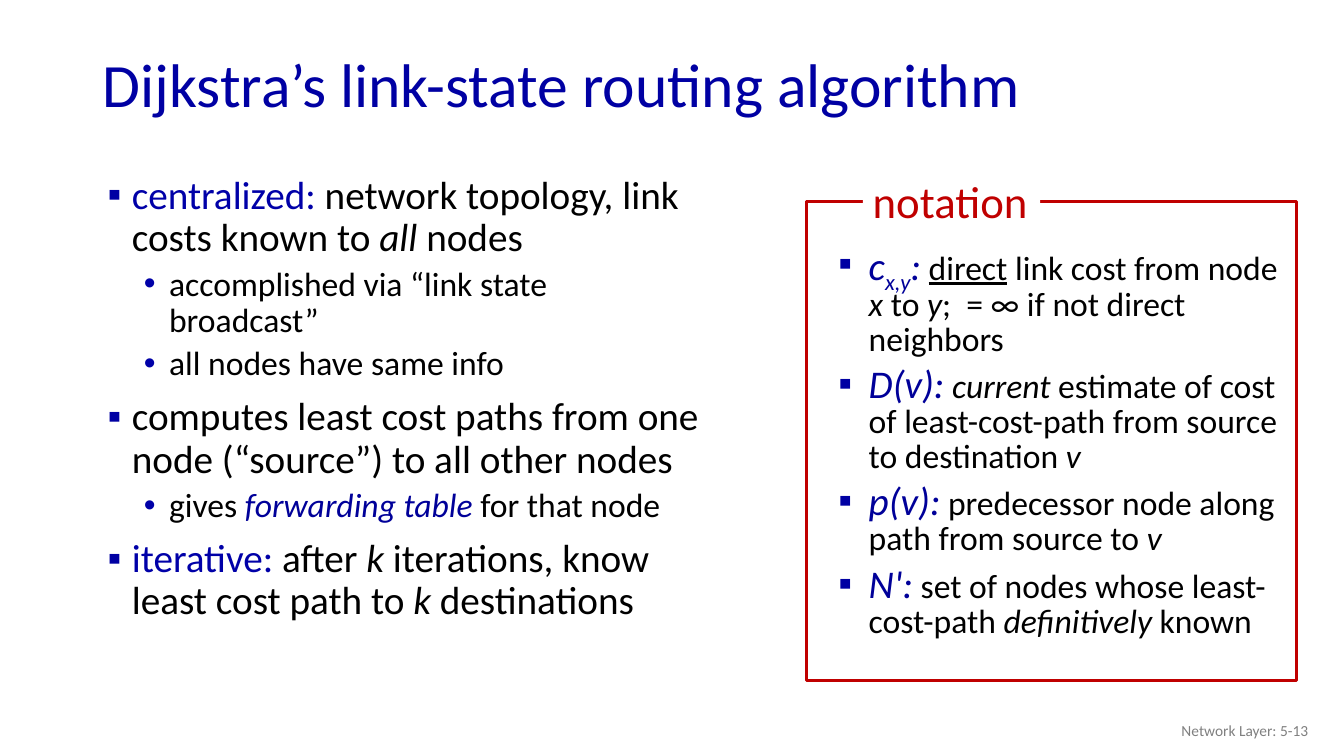
from lxml import etree
from pptx import Presentation
from pptx.dml.color import RGBColor
from pptx.enum import shapes, text
from pptx.oxml.ns import qn
from pptx.util import Pt

NAVY, BLUE, TERM, RED = "0000A3", "0000A8", "000099", "C00000"


def rgb(code):
    return RGBColor.from_string(code)


def write(para, words, size=24, color="000000", italic=False, line=False, base=0):
    """Add one run; base shifts it off the baseline, in percent."""
    run = para.add_run()
    run.text = words
    font = run.font
    font.name, font.size, font.italic, font.underline = "Calibri", Pt(size), italic, line
    font.color.rgb = rgb(color)
    if base:
        font._element.set("baseline", str(base * 1000))


deck = Presentation()
deck.slide_width, deck.slide_height = Pt(960), Pt(540)
slide = deck.slides.add_slide(deck.slide_layouts[5])

# Title
title = slide.shapes.title
title.left, title.top, title.width, title.height = Pt(66.24), Pt(27.36), Pt(774.72), Pt(70.56)
title.text_frame.vertical_anchor = text.MSO_ANCHOR.MIDDLE
para = title.text_frame.paragraphs[0]
para.alignment, para.line_spacing = text.PP_ALIGN.LEFT, 0.9
write(para, "Dijkstra’s link-state routing algorithm", size=44, color=NAVY)

# Footer
foot = slide.shapes.add_textbox(Pt(725.76), Pt(507.6), Pt(216), Pt(28.8)).text_frame
foot.word_wrap, foot.vertical_anchor = True, text.MSO_ANCHOR.MIDDLE
foot.paragraphs[0].alignment = text.PP_ALIGN.RIGHT
write(foot.paragraphs[0], "Network Layer: 5-13", size=11, color="808080")

# Bullet styles: level, mark, mark colour, indent, hang, line spacing, space before, size
MAIN = 0, "▪", NAVY, 28.08, 17.28, 0.9, 10, 28
SUB = 1, "•", BLUE, 54.72, 18, 0.9, 5, 24
NOTE = 0, "▪", NAVY, 31.68, 21.6, 0.85, 6, 24

ital = {"italic": True}
key = {"color": BLUE}
term = {"color": TERM, "italic": True, "size": 28}

points = [
    (MAIN, [("centralized: ", key), ("network topology, link costs known to ", {}),
            ("all", ital), (" nodes", {})]),
    (SUB, [("accomplished via “link state broadcast”", {})]),
    (SUB, [("all nodes have same info", {})]),
    (MAIN, [("computes least cost paths from one node (“source”) to all other nodes", {})]),
    (SUB, [("gives ", {}), ("forwarding table", {"color": TERM, "italic": True}),
           (" for that node", {})]),
    (MAIN, [("iterative: ", key), ("after ", {}), ("k", ital),
            (" iterations, know least cost path to ", {}), ("k ", ital),
            ("destinations", {})]),
]
terms = [
    (NOTE, [("c", term), ("x,y", {**term, "base": -25}), (":", term), (" ", ital),
            ("direct", {"line": True}), (" link cost from node ", {}), ("x", ital),
            (" to ", {}), ("y", ital), (";  = ∞ if not direct neighbors", {})]),
    (NOTE, [("D(v):", term), (" current", ital),
            (" estimate of cost of least-cost-path from source to destination ", {}),
            ("v", ital)]),
    (NOTE, [("p(v):", term), (" ", ital),
            ("predecessor node along path from source to ", {}), ("v", ital)]),
    (NOTE, [("N':", term), (" ", ital), ("set of nodes whose least-cost-path ", {}),
            ("definitively", ital), (" known", {})]),
]

# Bulleted columns
for items, area in [
    (points, (59.04, 121.68, 449.28, 385.92)),
    (terms, (581.76, 170.64, 339.12, 333.36)),
]:
    frame = slide.shapes.add_textbox(*map(Pt, area)).text_frame
    frame.word_wrap = True
    for row, (style, runs) in enumerate(items):
        level, mark, tint, indent, hang, spacing, before, size = style
        para = frame.add_paragraph() if row else frame.paragraphs[0]
        para.level, para.line_spacing, para.space_before = level, spacing, Pt(before)
        props = para._p.get_or_add_pPr()
        props.set("marL", str(Pt(indent)))
        props.set("indent", str(-Pt(hang)))
        fill = etree.SubElement(props, qn("a:buClr"))
        etree.SubElement(fill, qn("a:srgbClr"), val=tint)
        etree.SubElement(props, qn("a:buFont"), typeface="Arial")
        etree.SubElement(props, qn("a:buChar"), char=mark)
        for words, look in runs:
            write(para, words, **{"size": size, **look})

# Notation frame and its label
RECT = shapes.MSO_SHAPE.RECTANGLE
border = slide.shapes.add_shape(RECT, Pt(576), Pt(144), Pt(349.92), Pt(342))
border.shadow.inherit = False
border.fill.background()
border.line.color.rgb, border.line.width = rgb(RED), Pt(2.25)

label = slide.shapes.add_shape(RECT, Pt(616.32), Pt(120.24), Pt(126.72), Pt(46.08))
label.shadow.inherit = False
label.fill.solid()
label.fill.fore_color.rgb = rgb("FFFFFF")
label.line.fill.background()
frame = label.text_frame
frame.word_wrap, frame.auto_size = False, text.MSO_AUTO_SIZE.SHAPE_TO_FIT_TEXT
frame.vertical_anchor = text.MSO_ANCHOR.TOP
frame.paragraphs[0].alignment = text.PP_ALIGN.LEFT
write(frame.paragraphs[0], "notation", size=32, color=RED)

deck.save("out.pptx")
